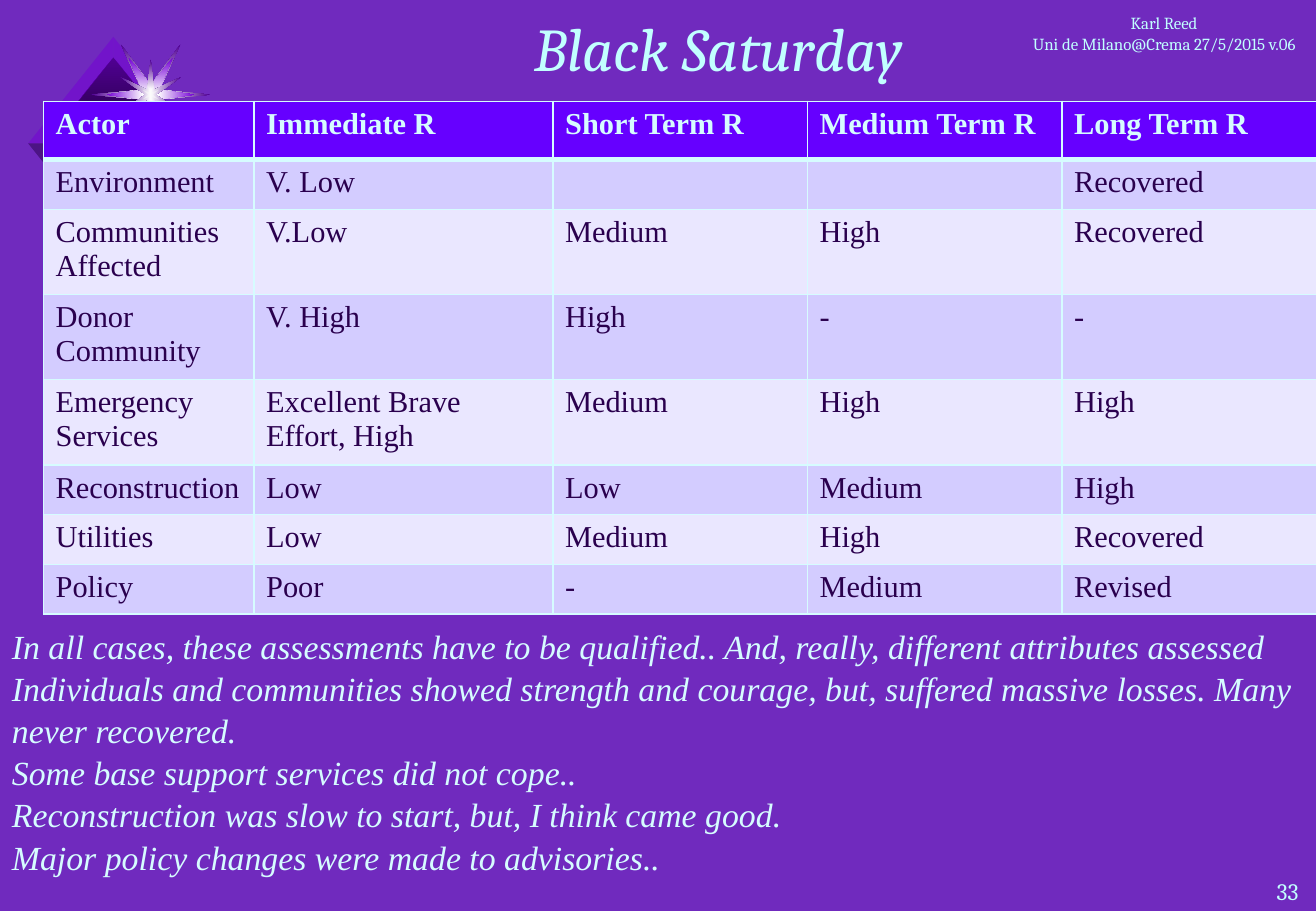
import pptx
import pptx.dml.color
import pptx.enum.text
import pptx.oxml
import pptx.oxml.ns
import pptx.util
from lxml import etree

Cm, Pt = pptx.util.Cm, pptx.util.Pt
RGBColor = pptx.dml.color.RGBColor
PP_ALIGN = pptx.enum.text.PP_ALIGN
qn = pptx.oxml.ns.qn

PURPLE = RGBColor(0x70, 0x2A, 0xBE)
DARK = RGBColor(0x2A, 0x00, 0x4E)
DEEP = RGBColor(0x28, 0x00, 0x49)
PLUM = RGBColor(0x50, 0x00, 0x93)
VIOLET = RGBColor(0x75, 0x00, 0xD7)
HEADER = RGBColor(0x66, 0x00, 0xFF)
BAND_DARK = RGBColor(0xD3, 0xCC, 0xFF)
BAND_LIGHT = RGBColor(0xEA, 0xE7, 0xFF)
CYAN = RGBColor(0xC2, 0xFF, 0xFF)
ICE = RGBColor(0xD6, 0xFC, 0xFF)
WHITE = RGBColor(0xFF, 0xFF, 0xFF)
PALE = RGBColor(0xF9, 0xF9, 0xF9)

prs = pptx.Presentation()
prs.slide_width, prs.slide_height = Cm(27.51), Cm(19.05)
slide = prs.slides.add_slide(prs.slide_layouts[6])
slide.background.fill.solid()
slide.background.fill.fore_color.rgb = PURPLE


def add_outline(centre, points, inner, outer=None):
    """Closed shape around centre: a glow from inner to outer, or half-transparent inner."""
    pts = [(Cm(centre[0] + x), Cm(centre[1] + y)) for x, y in points]
    builder = slide.shapes.build_freeform(*pts[0])
    builder.add_line_segments(pts[1:], close=True)
    s = builder.convert_to_shape()
    s.shadow.inherit = False
    s.line.fill.background()
    if outer is None:
        s.fill.solid()
        s.fill.fore_color.rgb = inner
        clr = s._element.spPr.find(".//" + qn("a:srgbClr"))
        etree.SubElement(clr, qn("a:alpha"), val="50000")
        return
    s.fill.gradient()
    for stop, color in zip(s.fill.gradient_stops, (inner, outer)):
        stop.color.rgb = color
    grad = s._element.spPr.find(qn("a:gradFill"))
    grad.remove(grad.find(qn("a:lin")))
    glow = etree.SubElement(grad, qn("a:path"), {"path": "rect"})
    etree.SubElement(glow, qn("a:fillToRect"), {side: "50000" for side in "ltrb"})


def add_text(box, lines, size, font, color, align=PP_ALIGN.LEFT, italic=False,
             wrap=True, spacing=1.0):
    left, top, width, height = (Cm(v) for v in box)
    tf = slide.shapes.add_textbox(left, top, width, height).text_frame
    tf.word_wrap = wrap
    for i, line in enumerate(lines):
        p = tf.add_paragraph() if i else tf.paragraphs[0]
        p.alignment = align
        p.line_spacing = spacing
        r = p.add_run()
        r.text = line
        r.font.size, r.font.name, r.font.italic = Pt(size), font, italic
        r.font.color.rgb = color


# Bevelled diamond
DIAMOND = (2.37, 3.0)
IN_X, IN_Y, OUT_X, OUT_Y = 1.43, 1.8, 1.78, 2.23
add_outline(DIAMOND, [(0, -IN_Y), (-IN_X, 0), (0, IN_Y), (IN_X, 0)], DEEP, PLUM)
for dy, color in ((-1, VIOLET), (1, DARK)):
    for dx in (1, -1):
        add_outline(DIAMOND, [(0, dy * IN_Y), (0, dy * OUT_Y),
                              (dx * OUT_X, 0), (dx * IN_X, 0)], color)

# Star bursts: one quarter each, from the side point round to the top point
STARS = [
    ([(1.25, 0), (0.18, -0.1), (0.62, -1.05), (0, -0.2)], WHITE, PLUM),
    ([(0.92, 0), (0.18, -0.1), (0.46, -0.77), (0, -0.2)], WHITE, VIOLET),
    ([(0.11, 0), (0.64, -0.37), (0.07, -0.1), (0, -0.74)], WHITE, PLUM),
    ([(0.05, 0), (0.17, -0.1), (0.03, -0.05), (0, -0.18)], PALE, None),
]
for quarter, inner, outer in STARS:
    half = quarter + [(-x, y) for x, y in quarter[-2::-1]]
    star = half + [(-x, -y) for x, y in half[1:-1]]
    add_outline((3.15, 1.98), star, inner, outer)

add_text((26.44, 18.21, 1.09, 0.84), ["33"], 14, "Cambria", CYAN, wrap=False)
add_text((21.16, 0.15, 6.35, 1.09), ["Karl Reed", "Uni de Milano@Crema 27/5/2015 v.06"],
         10, "Cambria", CYAN, PP_ALIGN.CENTER)
add_text((2.54, 0.1, 24.97, 2.0), ["Black Saturday"], 36, "Cambria", CYAN,
         PP_ALIGN.CENTER, italic=True)

# Assessment table
ROWS = [
    ("Actor", "Immediate R", "Short Term R", "Medium Term R", "Long Term R"),
    ("Environment", "V. Low", "", "", "Recovered"),
    ("Communities Affected", "V.Low", "Medium", "High", "Recovered"),
    ("Donor Community", "V. High", "High", "-", "-"),
    ("Emergency Services", "Excellent Brave Effort, High", "Medium", "High", "High"),
    ("Reconstruction", "Low", "Low", "Medium", "High"),
    ("Utilities", "Low", "Medium", "High", "Recovered"),
    ("Policy", "Poor", "-", "Medium", "Revised"),
]
WIDTHS = [4.4, 6.25, 5.32, 5.32, 5.32]
HEIGHTS = [1.22, 1.04, 1.78, 1.78, 1.78, 1.04, 1.04, 1.04]
table = slide.shapes.add_table(len(ROWS), len(WIDTHS), Cm(0.91), Cm(2.12),
                               Cm(sum(WIDTHS)), Cm(sum(HEIGHTS))).table
for column, width in zip(table.columns, WIDTHS):
    column.width = Cm(width)
for i, (row, height) in enumerate(zip(ROWS, HEIGHTS)):
    table.rows[i].height = Cm(height)
    for j, text in enumerate(row):
        cell = table.cell(i, j)
        p = cell.text_frame.paragraphs[0]
        p.font.size = Pt(18)
        if text:
            r = p.add_run()
            r.text = text
            r.font.size, r.font.name, r.font.bold = Pt(18), "Times New Roman", i == 0
            r.font.color.rgb = DARK if i else ICE
        tc_pr = cell._tc.get_or_add_tcPr()
        for side in "LRTB":
            thick = (i, side) in ((0, "B"), (1, "T"))
            ln = etree.SubElement(tc_pr, qn("a:ln" + side), w=str(Pt(3 if thick else 1)))
            fill = etree.SubElement(ln, qn("a:solidFill"))
            etree.SubElement(fill, qn("a:srgbClr"), val=str(ICE))
        cell.fill.solid()
        cell.fill.fore_color.rgb = (BAND_DARK if i % 2 else BAND_LIGHT) if i else HEADER

add_text((0, 12.93, 27.51, 5.56), [
    "In all cases, these assessments have to be qualified.. And, really, different attributes assessed",
    "Individuals and communities showed strength and courage, but, suffered massive losses. "
    "Many never recovered.",
    "Some base support services did not cope..",
    "Reconstruction was slow to start, but, I think came good.",
    "Major policy changes were made to advisories..",
], 20, "Times New Roman", ICE, italic=True, spacing=1.04)

prs.save("out.pptx")
